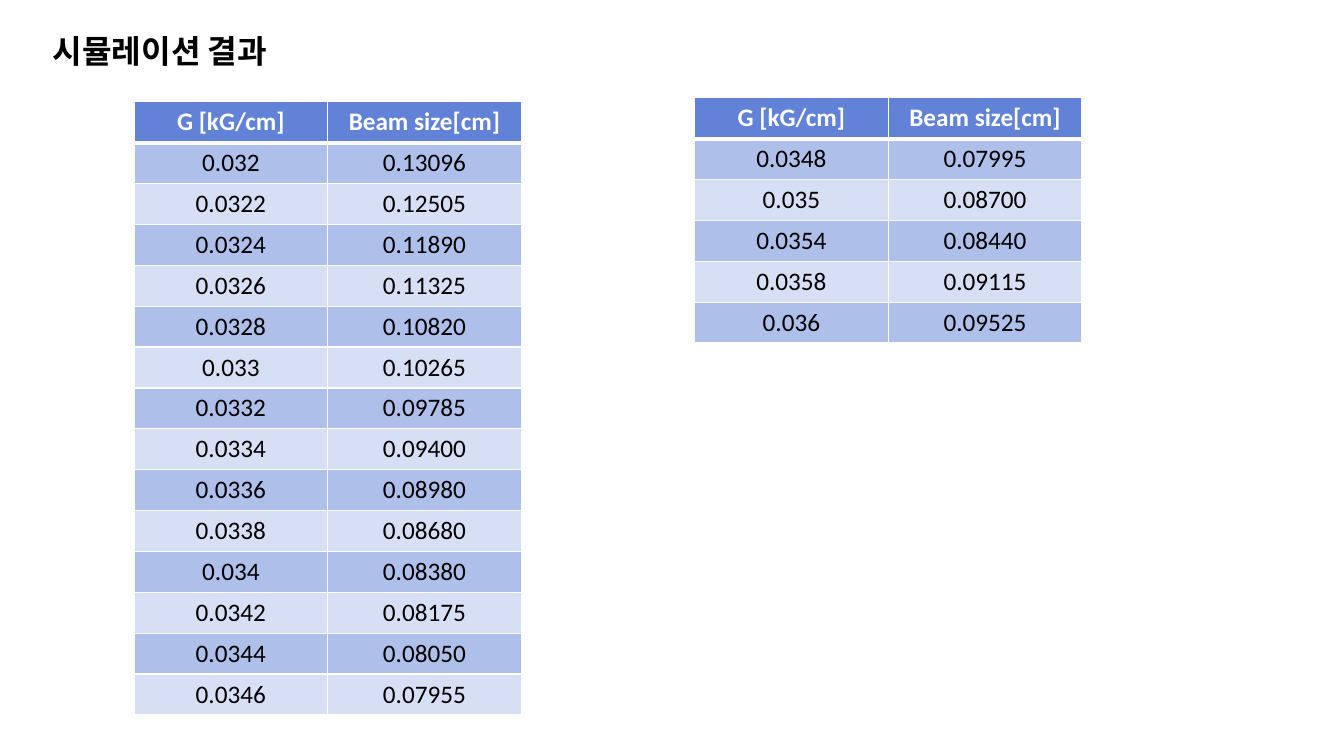
from lxml.etree import SubElement
from pptx import Presentation
from pptx.dml.color import RGBColor
from pptx.enum.text import MSO_ANCHOR, PP_ALIGN
from pptx.oxml.ns import qn
from pptx.util import Inches, Pt

FONT = "Calibri"
BLACK = RGBColor(0x00, 0x00, 0x00)
WHITE = RGBColor(0xFF, 0xFF, 0xFF)
HEADER_BLUE = RGBColor(0x61, 0x82, 0xD6)
BAND_BLUES = (RGBColor(0xAE, 0xBF, 0xEA), RGBColor(0xD7, 0xDF, 0xF4))

COLUMN_WIDTH = 1.92
HEADINGS = ("G [kG/cm]", "Beam size[cm]")
LOWER_GRADIENTS = [
    ("0.032", "0.13096"),
    ("0.0322", "0.12505"),
    ("0.0324", "0.11890"),
    ("0.0326", "0.11325"),
    ("0.0328", "0.10820"),
    ("0.033", "0.10265"),
    ("0.0332", "0.09785"),
    ("0.0334", "0.09400"),
    ("0.0336", "0.08980"),
    ("0.0338", "0.08680"),
    ("0.034", "0.08380"),
    ("0.0342", "0.08175"),
    ("0.0344", "0.08050"),
    ("0.0346", "0.07955"),
]
UPPER_GRADIENTS = [
    ("0.0348", "0.07995"),
    ("0.035", "0.08700"),
    ("0.0354", "0.08440"),
    ("0.0358", "0.09115"),
    ("0.036", "0.09525"),
]


class ResultSlide:
    """Hold the current slide and its text and table style."""

    def __init__(self, presentation):
        self.slide = presentation.slides.add_slide(presentation.slide_layouts[5])

    def style_paragraph(self, paragraph, size, color, bold, alignment):
        """Format a whole paragraph."""
        paragraph.alignment = alignment
        paragraph.font.name = FONT
        paragraph.font.size = Pt(size)
        paragraph.font.bold = bold
        paragraph.font.color.rgb = color

    def add_title(self, text, left, top, width, height):
        """Place and format the title placeholder."""
        title = self.slide.shapes.title
        title.left, title.top = Inches(left), Inches(top)
        title.width, title.height = Inches(width), Inches(height)
        title.text_frame.text = text
        title.text_frame.vertical_anchor = MSO_ANCHOR.MIDDLE
        self.style_paragraph(title.text_frame.paragraphs[0], 23, BLACK, True, PP_ALIGN.LEFT)

    def add_borders(self, cell, top_width, bottom_width):
        """Draw white lines around a cell."""
        properties = cell._tc.get_or_add_tcPr()
        widths = {"a:lnL": 1, "a:lnR": 1, "a:lnT": top_width, "a:lnB": bottom_width}
        for tag, width in widths.items():
            line = SubElement(properties, qn(tag), w=str(Pt(width)))
            fill = SubElement(line, qn("a:solidFill"))
            SubElement(fill, qn("a:srgbClr"), val=str(WHITE))

    def add_results(self, records, left, top, height):
        """Add a banded table of gradients and beam sizes."""
        rows = [HEADINGS, *records]
        table = self.slide.shapes.add_table(
            len(rows), len(HEADINGS), Inches(left), Inches(top),
            Inches(COLUMN_WIDTH * len(HEADINGS)), Inches(height),
        ).table
        for row_index, values in enumerate(rows):
            is_header = row_index == 0
            for column_index, value in enumerate(values):
                cell = table.cell(row_index, column_index)
                self.add_borders(cell, 3 if row_index == 1 else 1, 3 if is_header else 1)
                cell.fill.solid()
                cell.fill.fore_color.rgb = (
                    HEADER_BLUE if is_header else BAND_BLUES[(row_index - 1) % 2]
                )
                cell.text = value
                self.style_paragraph(
                    cell.text_frame.paragraphs[0], 18,
                    WHITE if is_header else BLACK, is_header, PP_ALIGN.CENTER,
                )


def main():
    """Build and save the simulation results slide."""
    presentation = Presentation()
    presentation.slide_width = Inches(13.33)
    presentation.slide_height = Inches(7.5)
    result_slide = ResultSlide(presentation)
    result_slide.add_title("시뮬레이션 결과", 0.42, 0.26, 11.85, 0.48)
    result_slide.add_results(LOWER_GRADIENTS, 1.33, 1.01, 6.08)
    result_slide.add_results(UPPER_GRADIENTS, 6.89, 0.97, 2.43)
    presentation.save("out.pptx")


if __name__ == "__main__":
    main()
